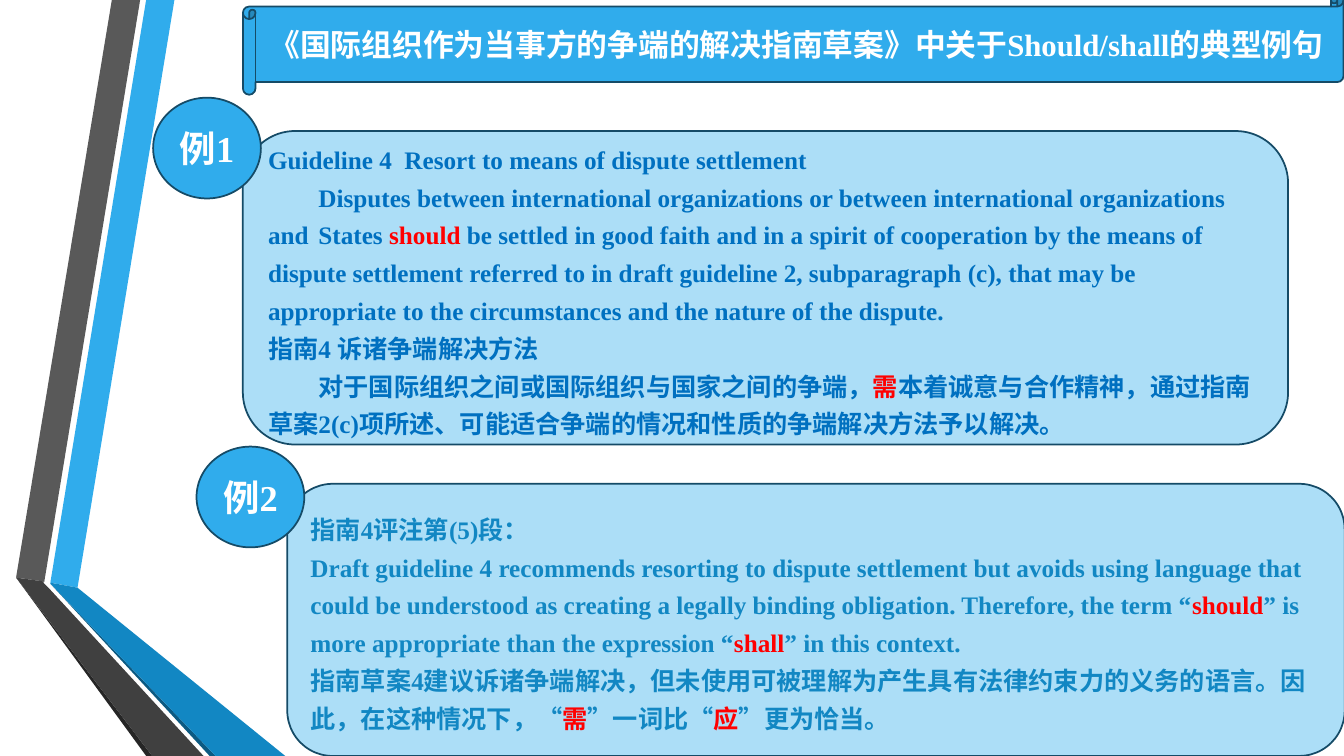
"""Build a slide with two examples of should and shall in draft guidelines."""
from pptx import Presentation
from pptx.dml.color import RGBColor
from pptx.enum.shapes import MSO_SHAPE
from pptx.enum.text import MSO_ANCHOR, PP_ALIGN
from pptx.util import Pt

ROUND = MSO_SHAPE.ROUNDED_RECTANGLE
OVAL = MSO_SHAPE.OVAL
SCROLL = MSO_SHAPE.HORIZONTAL_SCROLL
LEFT, CENTER = PP_ALIGN.LEFT, PP_ALIGN.CENTER
MIDDLE = MSO_ANCHOR.MIDDLE

THEME = {
    "font": "Times New Roman",
    "blue": "30ACEC", "pale": "ACDEF7", "edge": "154B67",
    "white": "FFFFFF", "red": "FF0000", "deep": "0070C0", "mid": "1287C3",
    "navy": "0C5A82", "gray": "595959", "dark": "404040", "black": "262626",
    "body": 18, "title": 22, "badge": 26, "line": 1.25,
}

TITLE = "《国际组织作为当事方的争端的解决指南草案》中关于Should/shall的典型例句"

# Asterisks enclose the words set in red.
CASES = [
    {"label": "例1", "color": "deep", "box": (173.5, 93.6, 746.6, 223.9),
     "badge": (109.4, 69.8), "text": [
         "Guideline 4  Resort to means of dispute settlement",
         "\tDisputes between international organizations or between international "
         "organizations \tand \tStates *should* be settled in good faith and in a "
         "spirit of cooperation by the means of \tdispute settlement referred to in "
         "draft guideline 2, subparagraph (c), that may be \tappropriate to the "
         "circumstances and the nature of the dispute.",
         "指南4 诉诸争端解决方法",
         "\t对于国际组织之间或国际组织与国家之间的争端，*需*本着诚意与合作精神，通过指南"
         "\t草案2(c)项所述、可能适合争端的情况和性质的争端解决方法予以解决。"]},
    {"label": "例2", "color": "mid", "box": (205.2, 345.6, 755.3, 194.4),
     "badge": (140.4, 319), "text": [
         "指南4评注第(5)段：",
         "Draft guideline 4 recommends resorting to dispute settlement but avoids "
         "using language that could be understood as creating a legally binding "
         "obligation. Therefore, the term “*should*” is more appropriate than the "
         "expression “*shall*” in this context.",
         "指南草案4建议诉诸争端解决，但未使用可被理解为产生具有法律约束力的义务的语言。"
         "因此，在这种情况下，“*需*”一词比“*应*”更为恰当。"]},
]

BANDS = [
    ("blue", [(36, 416.2), (55.4, 419.8), (124.6, 0), (104.4, 0)]),
    ("gray", [(100.1, 0), (79.9, 0), (11.5, 412.6), (31.7, 415.4)]),
    ("black", [(11.5, 412.6), (104.4, 540), (108.7, 540)]),
    ("navy", [(36, 416.9), (149.8, 540), (154.1, 540)]),
    ("mid", [(36, 416.9), (154.1, 540), (203.8, 540), (55.4, 419.8), (36, 416.2)]),
    ("dark", [(145.4, 540), (34.6, 419.8), (31, 416.2), (31.7, 415.4),
              (11.5, 412.6), (108.7, 540)]),
]


def tint(name):
    return RGBColor.from_string(THEME[name])


def paint(shape, fill, line=None):
    shape.shadow.inherit = False
    shape.fill.solid()
    shape.fill.fore_color.rgb = tint(fill)
    if line:
        shape.line.color.rgb = tint(line)
        shape.line.width = Pt(THEME["line"])
    else:
        shape.line.fill.background()


def write(shape, lines, size, color="white", align=CENTER, space=None):
    frame = shape.text_frame
    frame.word_wrap = True
    frame.vertical_anchor = MIDDLE
    for i, line in enumerate(lines):
        para = frame.add_paragraph() if i else frame.paragraphs[0]
        para.alignment = align
        para.line_spacing = space
        for j, part in enumerate(line.split("*")):
            run = para.add_run()
            run.text = part
            font = run.font
            font.name, font.size, font.bold = THEME["font"], Pt(THEME[size]), True
            font.color.rgb = tint("red" if j % 2 else color)


def place(slide, kind, box, fill):
    shape = slide.shapes.add_shape(kind, *map(Pt, box))
    paint(shape, fill, "edge")
    return shape


def band(slide, fill, points):
    dots = [(Pt(x), Pt(y)) for x, y in points]
    form = slide.shapes.build_freeform(*dots[0], scale=1.0)
    form.add_line_segments(dots[1:], close=True)
    paint(form.convert_to_shape(), fill)


def main():
    deck = Presentation()
    deck.slide_width, deck.slide_height = Pt(960), Pt(540)
    slide = deck.slides.add_slide(deck.slide_layouts[6])
    for fill, points in BANDS:
        band(slide, fill, points)
    for case in CASES:
        panel = place(slide, ROUND, case["box"], "pale")
        write(panel, case["text"], "body", color=case["color"], align=LEFT, space=1.25)
        badge = place(slide, OVAL, (*case["badge"], 77, 72), "blue")
        write(badge, [case["label"]], "badge")
    head = place(slide, SCROLL, (173.5, -4.3, 786.2, 72), "blue")
    write(head, [TITLE], "title")
    deck.save("out.pptx")


if __name__ == "__main__":
    main()
